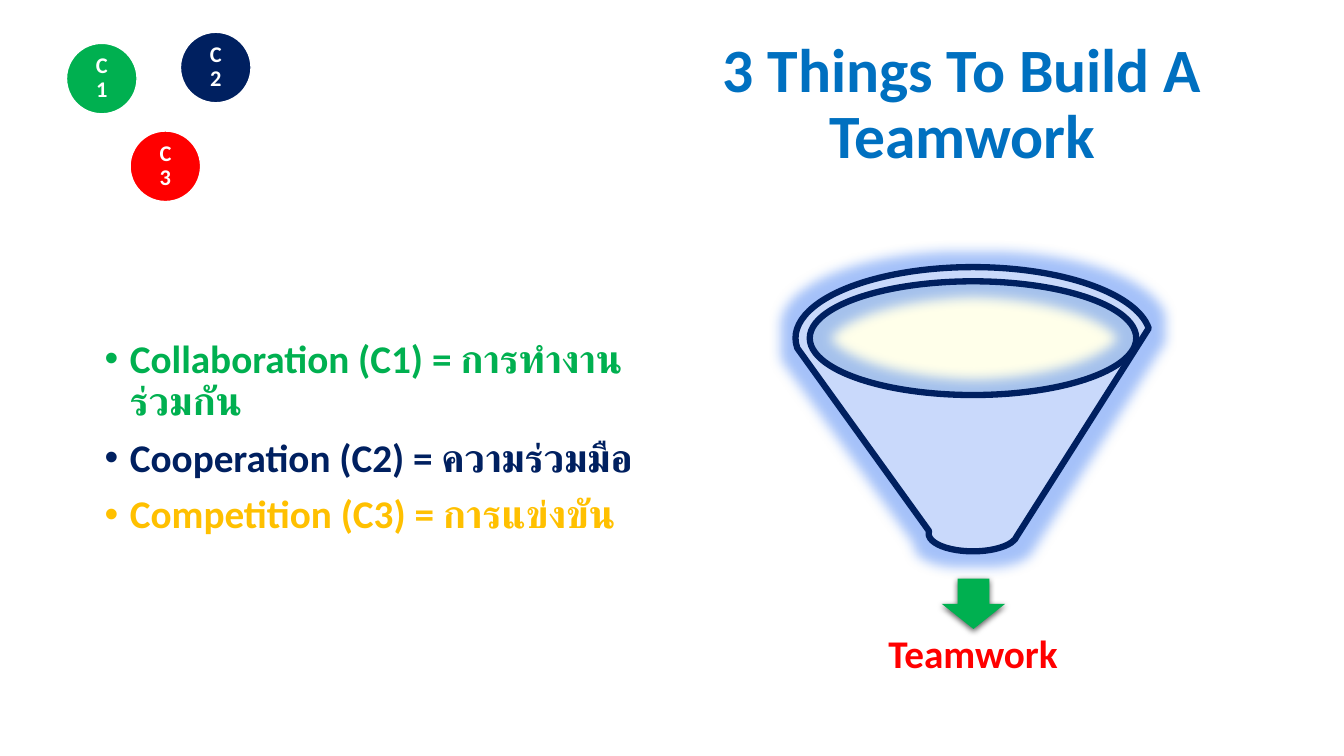
from dataclasses import dataclass

from lxml import etree
from pptx import Presentation
from pptx.dml.color import RGBColor
from pptx.enum.shapes import MSO_SHAPE
from pptx.enum.text import MSO_ANCHOR, MSO_AUTO_SIZE, PP_ALIGN
from pptx.oxml.ns import qn
from pptx.util import Inches, Pt

ELLIPSE, FUNNEL, DOWN_ARROW = MSO_SHAPE.OVAL, MSO_SHAPE.FUNNEL, MSO_SHAPE.DOWN_ARROW
TOP, MIDDLE = MSO_ANCHOR.TOP, MSO_ANCHOR.MIDDLE
LEFT, CENTER = PP_ALIGN.LEFT, PP_ALIGN.CENTER
TITLE_ONLY = 5


@dataclass(frozen=True)
class Theme:
    font: str = "Calibri"
    blue: str = "0070C0"
    navy: str = "002060"
    green: str = "00B050"
    red: str = "FF0000"
    amber: str = "FFC000"
    cream: str = "FFFFCC"
    white: str = "FFFFFF"
    black: str = "000000"
    glow: str = "1F66F0"
    title_size: int = 44
    body_size: int = 28
    badge_size: int = 16


THEME = Theme()

BADGES = [
    ("C1", 0.66, 0.43, THEME.green),
    ("C2", 1.79, 0.32, THEME.navy),
    ("C3", 1.29, 1.3, THEME.red),
]
BADGE_DIAMETER = 0.7
DEFINITIONS = [
    ("Collaboration (C1) = การทำงานร่วมกัน", THEME.green),
    ("Cooperation (C2) = ความร่วมมือ", THEME.navy),
    ("Competition (C3) = การแข่งขัน", THEME.amber),
]


def set_attributes(target, values):
    for name, value in values.items():
        setattr(target, name, value)


def place(shape, box):
    names = ("left", "top", "width", "height")
    set_attributes(shape, dict(zip(names, map(Inches, box))))


def format_frame(frame, anchor, inset_x=0.1, inset_y=0.05):
    set_attributes(frame, {
        "word_wrap": True,
        "auto_size": MSO_AUTO_SIZE.NONE,
        "vertical_anchor": anchor,
        "margin_left": Inches(inset_x),
        "margin_right": Inches(inset_x),
        "margin_top": Inches(inset_y),
        "margin_bottom": Inches(inset_y),
    })


def write_paragraph(paragraph, text, size, color, alignment=CENTER):
    set_attributes(paragraph, {"alignment": alignment, "line_spacing": 0.9})
    run = paragraph.add_run()
    run.text = text
    set_attributes(run.font, {"name": THEME.font, "size": Pt(size), "bold": True})
    run.font.color.rgb = RGBColor.from_string(color)


def add_bullet(paragraph):
    properties = paragraph._p.get_or_add_pPr()
    indent = Inches(0.25)
    properties.set("marL", str(indent))
    properties.set("indent", str(-indent))
    font = etree.SubElement(properties, qn("a:buFont"))
    font.set("typeface", "Arial")
    etree.SubElement(properties, qn("a:buChar")).set("char", "•")


def set_alpha(color_element, percent):
    alpha = etree.SubElement(color_element, qn("a:alpha"))
    alpha.set("val", str(percent * 1000))


def add_effect(shape, kind, color, percent, **attributes):
    effects = shape._element.spPr.find(qn("a:effectLst"))
    effect = etree.SubElement(effects, qn(kind))
    for name, value in attributes.items():
        effect.set(name, str(value))
    color_element = etree.SubElement(effect, qn("a:srgbClr"))
    color_element.set("val", color)
    set_alpha(color_element, percent)


def add_filled_shape(slide, preset, box, fill, opacity=100, line=None, line_width=1):
    shape = slide.shapes.add_shape(preset, *map(Inches, box))
    shape.shadow.inherit = False
    shape.fill.solid()
    shape.fill.fore_color.rgb = RGBColor.from_string(fill)
    if opacity < 100:
        color_element = shape._element.spPr.find(qn("a:solidFill"))[0]
        set_alpha(color_element, opacity)
    if line:
        shape.line.color.rgb = RGBColor.from_string(line)
        shape.line.width = Pt(line_width)
    else:
        shape.line.fill.background()
    return shape


def add_title(slide, text):
    title = slide.shapes.title
    place(title, (6.6, 0.32, 5.89, 1.45))
    format_frame(title.text_frame, MIDDLE)
    write_paragraph(title.text_frame.paragraphs[0], text, THEME.title_size, THEME.blue)


def add_definitions(slide):
    frame = slide.shapes.add_textbox(*map(Inches, (0.94, 3.32, 5.89, 2.82))).text_frame
    format_frame(frame, TOP)
    for index, (text, color) in enumerate(DEFINITIONS):
        paragraph = frame.add_paragraph() if index else frame.paragraphs[0]
        write_paragraph(paragraph, text, THEME.body_size, color, LEFT)
        paragraph.space_before = Pt(10)
        add_bullet(paragraph)


def add_badge(slide, text, left, top, color):
    box = (left, top, BADGE_DIAMETER, BADGE_DIAMETER)
    badge = add_filled_shape(slide, ELLIPSE, box, color, line=THEME.white)
    format_frame(badge.text_frame, MIDDLE, 0.19, 0.19)
    write_paragraph(badge.text_frame.paragraphs[0], text, THEME.badge_size, THEME.white)


def add_funnel(slide):
    """Draw the funnel with its opening, the arrow below it and the result."""
    add_filled_shape(slide, ELLIPSE, (8.03, 2.79, 3.25, 1.13), THEME.cream, 40)
    arrow = add_filled_shape(slide, DOWN_ARROW, (9.34, 5.74, 0.63, 0.5), THEME.green)
    add_effect(arrow, "a:outerShdw", THEME.black, 63,
               blurRad=Pt(4.5), dist=Pt(1.5), dir=90 * 60000, rotWithShape=0)
    funnel = add_filled_shape(slide, FUNNEL, (7.89, 2.65, 3.52, 2.82),
                              THEME.white, 40, THEME.navy, 4.5)
    add_effect(funnel, "a:glow", THEME.glow, 40, rad=Pt(18))
    label = slide.shapes.add_textbox(*map(Inches, (8.14, 6.13, 3.02, 0.76)))
    format_frame(label.text_frame, MIDDLE, 0.22, 0.22)
    write_paragraph(label.text_frame.paragraphs[0], "Teamwork", THEME.body_size, THEME.red)


def main():
    presentation = Presentation()
    presentation.slide_width = Inches(13.33)
    presentation.slide_height = Inches(7.5)
    slide = presentation.slides.add_slide(presentation.slide_layouts[TITLE_ONLY])
    add_title(slide, "3 Things To Build A Teamwork")
    add_definitions(slide)
    add_funnel(slide)
    for badge in BADGES:
        add_badge(slide, *badge)
    presentation.save("out.pptx")


if __name__ == "__main__":
    main()
